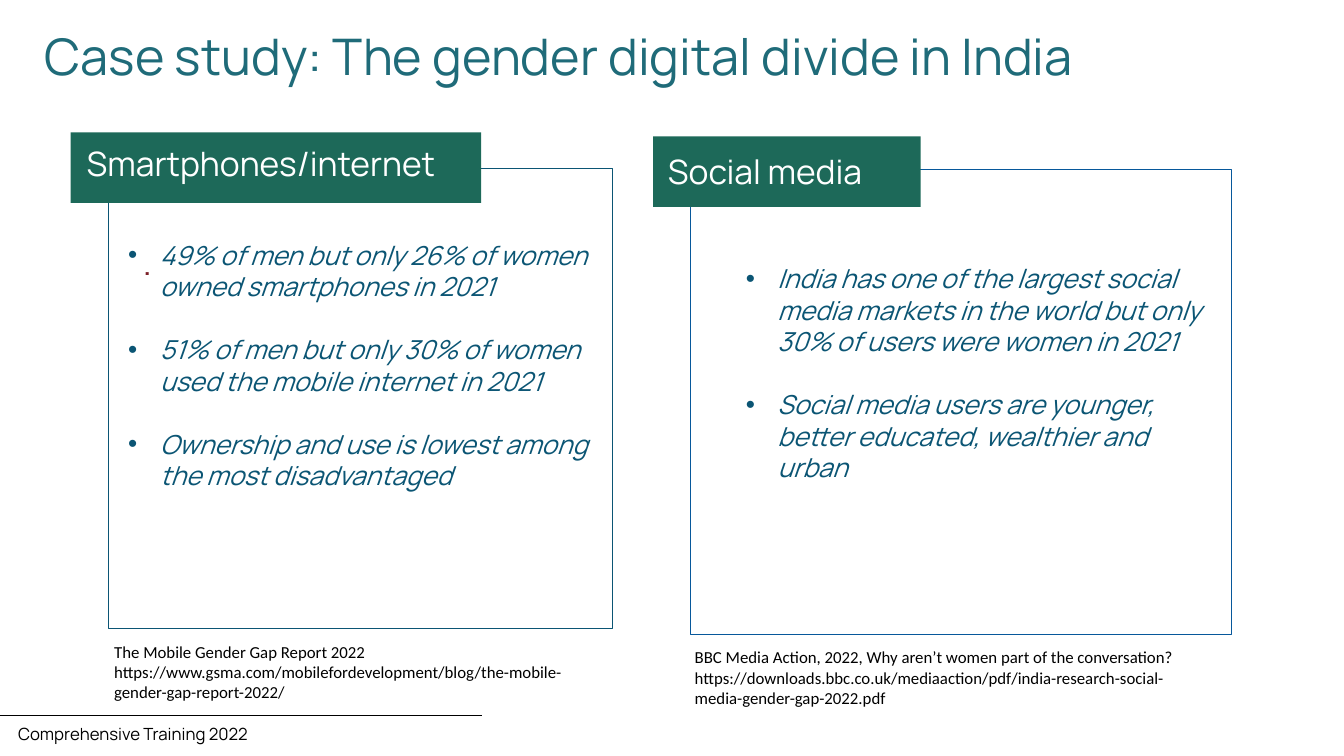
from lxml.etree import SubElement
from pptx import Presentation
from pptx.dml.color import RGBColor
from pptx.enum.shapes import MSO_CONNECTOR, MSO_SHAPE
from pptx.oxml.ns import qn
from pptx.util import Inches, Pt

COLUMNS, ROWS = 20, 11.25
SLIDE_WIDTH, SLIDE_HEIGHT = Inches(20), Inches(11.25)

BLACK = RGBColor(0x00, 0x00, 0x00)
WHITE = RGBColor(0xFF, 0xFF, 0xFF)
TITLE_TEAL = RGBColor(0x1F, 0x6B, 0x79)
BODY_BLUE = RGBColor(0x0B, 0x55, 0x74)
PANEL_BLUE = RGBColor(0x07, 0x58, 0x9B)
LABEL_GREEN = RGBColor(0x1D, 0x69, 0x59)
DOT_RED = RGBColor(0x7C, 0x21, 0x28)

HEADING_INSETS = (0.15, 0.07)
BULLET_INDENT = 0.47

MEN_AND_WOMEN = [
    "49% of men but only 26% of women owned smartphones in 2021",
    "51% of men but only 30% of women used the mobile internet in 2021",
    "Ownership and use is lowest among the most disadvantaged",
]
SOCIAL_USERS = [
    "India has one of the largest social media markets in the world "
    "but only 30% of users were women in 2021",
    "Social media users are younger, better educated, wealthier and urban",
]
MOBILE_SOURCE = [
    "The Mobile Gender Gap Report 2022 "
    "https://www.gsma.com/mobilefordevelopment/blog/the-mobile-gender-gap-report-2022/",
]
SOCIAL_SOURCE = [
    "BBC Media Action, 2022, Why aren’t women part of the conversation?",
    "https://downloads.bbc.co.uk/mediaaction/pdf/"
    "india-research-social-media-gender-gap-2022.pdf",
]


def across(columns):
    return int(SLIDE_WIDTH * columns / COLUMNS)


def down(rows):
    return int(SLIDE_HEIGHT * rows / ROWS)


def place(left, top, width, height):
    """Turn grid columns and rows into slide lengths."""
    return across(left), down(top), across(width), down(height)


def add_bullet(para):
    properties = para._p.get_or_add_pPr()
    properties.set("marL", str(across(BULLET_INDENT)))
    properties.set("indent", str(-across(BULLET_INDENT)))
    SubElement(properties, qn("a:buFont"), typeface="Arial")
    SubElement(properties, qn("a:buChar"), char="•")


def add_text(page, lines, area, size, color, font="Manrope", italic=False,
             bullets=False, gap=0, line_spacing=None, insets=(0.1, 0.05)):
    box = page.shapes.add_textbox(*place(*area))
    frame = box.text_frame
    frame.word_wrap = True
    frame.margin_left = frame.margin_right = across(insets[0])
    frame.margin_top = frame.margin_bottom = down(insets[1])
    for index, line in enumerate(lines):
        para = frame.add_paragraph() if index else frame.paragraphs[0]
        if bullets:
            add_bullet(para)
        if index and gap:
            para.space_before = Pt(gap)
        if line_spacing:
            para.line_spacing = line_spacing
        span = para.add_run()
        span.text = line
        span.font.name = font
        span.font.size = Pt(size)
        span.font.italic = italic
        span.font.color.rgb = color


def add_rectangle(page, area, fill=None, line=None):
    box = page.shapes.add_shape(MSO_SHAPE.RECTANGLE, *place(*area))
    box.shadow.inherit = False
    if fill is None:
        box.fill.background()
    else:
        box.fill.solid()
        box.fill.fore_color.rgb = fill
    if line is None:
        box.line.fill.background()
    else:
        box.line.color.rgb = line
        box.line.width = Pt(1)


def add_bullets(page, lines, area):
    add_text(page, lines, area, 28, BODY_BLUE, italic=True, bullets=True, gap=34)


def add_heading(page, text, label_area, text_area):
    """Draw a green label with its heading over a panel's corner."""
    add_rectangle(page, label_area, fill=LABEL_GREEN)
    add_text(page, [text], text_area, 36, WHITE, insets=HEADING_INSETS)


def add_footer(page):
    add_text(page, ["Comprehensive Training 2022"], (0.17, 10.72, 6.58, 0.4), 18, BLACK)
    rule = page.shapes.add_connector(
        MSO_CONNECTOR.STRAIGHT, 0, down(10.65), across(7.17), down(10.65))
    rule.line.color.rgb = BLACK
    rule.line.width = Pt(0.5)
    SubElement(rule._element.spPr, qn("a:effectLst"))


def main():
    deck = Presentation()
    deck.slide_width, deck.slide_height = SLIDE_WIDTH, SLIDE_HEIGHT
    page = deck.slides.add_slide(deck.slide_layouts[6])

    add_footer(page)
    add_text(page, ["Case study: The gender digital divide in India"],
             (0.57, 0.43, 18.86, 1.28), 54, TITLE_TEAL, line_spacing=0.9)

    add_rectangle(page, (1.61, 2.51, 7.5, 6.84), line=BODY_BLUE)
    add_text(page, ["."], (1.99, 3.53, 4.98, 0.76), 36, DOT_RED,
             font="Cabin", insets=HEADING_INSETS)
    add_bullets(page, MEN_AND_WOMEN, (1.81, 3.51, 7.11, 5.83))
    add_heading(page, "Smartphones/internet",
                (1.05, 1.97, 6.11, 1.05), (1.14, 2.05, 6, 0.76))
    add_text(page, MOBILE_SOURCE, (1.6, 9.5, 7.05, 1.01), 18, BLACK, font="Calibri")

    add_rectangle(page, (10.28, 2.52, 8.05, 6.92), line=PANEL_BLUE)
    add_bullets(page, SOCIAL_USERS, (11, 3.86, 7.01, 5.32))
    add_heading(page, "Social media",
                (9.72, 2.03, 3.98, 1.05), (9.79, 2.17, 6, 0.76))
    add_text(page, SOCIAL_SOURCE, (10.24, 9.58, 7.77, 1.47), 18, BLACK, font="Calibri")

    deck.save("out.pptx")


if __name__ == "__main__":
    main()
